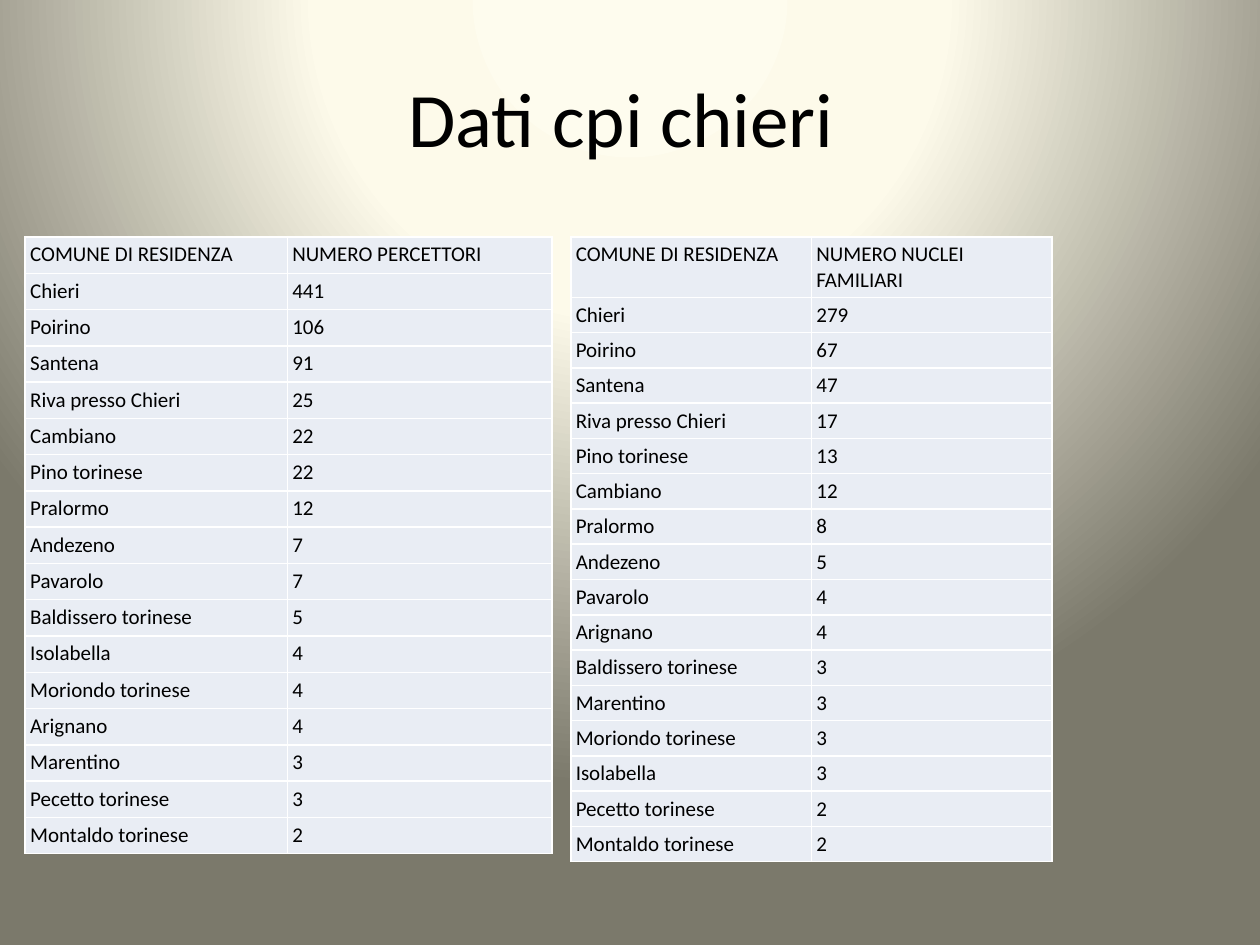
from lxml.etree import SubElement
from pptx import Presentation
from pptx.dml.color import RGBColor
from pptx.enum.text import MSO_ANCHOR, PP_ALIGN
from pptx.oxml import parse_xml
from pptx.oxml.ns import nsdecls, qn
from pptx.util import Inches, Pt

BLACK = RGBColor(0x00, 0x00, 0x00)
WHITE = RGBColor(0xFF, 0xFF, 0xFF)
CELL_BLUE = RGBColor(0xE9, 0xED, 0xF4)
IVORY = RGBColor(0xFE, 0xFC, 0xEE)
CREAM = RGBColor(0xFD, 0xFA, 0xEA)
OLIVE = RGBColor(0x7B, 0x79, 0x6B)

PERCETTORI = [
    ("COMUNE DI RESIDENZA", "NUMERO PERCETTORI"),
    ("Chieri", 441), ("Poirino", 106), ("Santena", 91),
    ("Riva presso Chieri", 25), ("Cambiano", 22), ("Pino torinese", 22),
    ("Pralormo", 12), ("Andezeno", 7), ("Pavarolo", 7),
    ("Baldissero torinese", 5), ("Isolabella", 4), ("Moriondo torinese", 4),
    ("Arignano", 4), ("Marentino", 3), ("Pecetto torinese", 3),
    ("Montaldo torinese", 2),
]
NUCLEI = [
    ("COMUNE DI RESIDENZA", "NUMERO NUCLEI FAMILIARI"),
    ("Chieri", 279), ("Poirino", 67), ("Santena", 47),
    ("Riva presso Chieri", 17), ("Pino torinese", 13), ("Cambiano", 12),
    ("Pralormo", 8), ("Andezeno", 5), ("Pavarolo", 4),
    ("Arignano", 4), ("Baldissero torinese", 3), ("Marentino", 3),
    ("Moriondo torinese", 3), ("Isolabella", 3), ("Pecetto torinese", 2),
    ("Montaldo torinese", 2),
]


def apply(target, formats):
    for attribute, value in formats.items():
        setattr(target, attribute, value)


class ResidenceSlide:
    """Hold the style and the current slide, and add each kind of element."""

    font_name = "Calibri"
    cell_format = {
        "margin_left": Inches(0.04), "margin_right": Inches(0.04),
        "margin_top": Inches(0.04), "margin_bottom": Inches(0.04),
        "vertical_anchor": MSO_ANCHOR.TOP,
    }

    def __init__(self, slide):
        self.slide = slide

    def background(self, stops):
        self.slide.background.fill.solid()
        properties = self.slide.element.find(".//" + qn("p:bgPr"))
        colours = "".join(
            f'<a:gs pos="{percent * 1000}"><a:srgbClr val="{colour}"/></a:gs>'
            for percent, colour in stops
        )
        gradient = parse_xml(
            f'<a:gradFill {nsdecls("a")} rotWithShape="1"><a:gsLst>{colours}</a:gsLst>'
            '<a:path path="circle"><a:fillToRect l="50000" t="-80000" r="50000" b="180000"/>'
            "</a:path></a:gradFill>"
        )
        properties.replace(properties.find(qn("a:solidFill")), gradient)

    def label(self, paragraph, text, size):
        run = paragraph.add_run()
        run.text = text
        apply(run.font, {"name": self.font_name, "size": Pt(size), "bold": False})
        run.font.color.rgb = BLACK

    def title(self, text, left, top, width, height):
        box = self.slide.shapes.add_textbox(
            Inches(left), Inches(top), Inches(width), Inches(height))
        apply(box.text_frame, {"word_wrap": True, "vertical_anchor": MSO_ANCHOR.MIDDLE})
        heading = box.text_frame.paragraphs[0]
        heading.alignment = PP_ALIGN.CENTER
        self.label(heading, text, 44)

    def borders(self, cell):
        properties = cell._tc.get_or_add_tcPr()
        for side in ("lnL", "lnR", "lnT", "lnB"):
            line = SubElement(properties, qn(f"a:{side}"), w=str(Pt(1)))
            fill = SubElement(line, qn("a:solidFill"))
            SubElement(fill, qn("a:srgbClr"), val=str(WHITE))

    def table(self, rows, left, top, widths, height, header_height):
        table = self.slide.shapes.add_table(
            len(rows), len(widths), Inches(left), Inches(top),
            Inches(sum(widths)), Inches(height)).table
        apply(table, {"first_row": False, "horz_banding": False})
        for column, width in zip(table.columns, widths):
            column.width = Inches(width)
        body_height = (height - header_height) / (len(rows) - 1)
        for index, (row, values) in enumerate(zip(table.rows, rows)):
            row.height = Inches(body_height if index else header_height)
            for cell, value in zip(row.cells, values):
                apply(cell, self.cell_format)
                self.borders(cell)
                cell.fill.solid()
                cell.fill.fore_color.rgb = CELL_BLUE
                self.label(cell.text_frame.paragraphs[0], str(value), 12)


def main():
    deck = Presentation()
    apply(deck, {"slide_width": Inches(10), "slide_height": Inches(7.5)})
    page = ResidenceSlide(deck.slides.add_slide(deck.slide_layouts[6]))
    page.background([(0, IVORY), (40, CREAM), (100, OLIVE)])
    page.title("Dati cpi chieri ", 0.5, 0.3, 9, 1.25)
    page.table(PERCETTORI, 0.2, 1.88, (2.08, 2.1), 4.9, 0.29)
    page.table(NUCLEI, 4.53, 1.88, (1.91, 1.91), 4.96, 0.48)
    deck.save("out.pptx")


if __name__ == "__main__":
    main()
